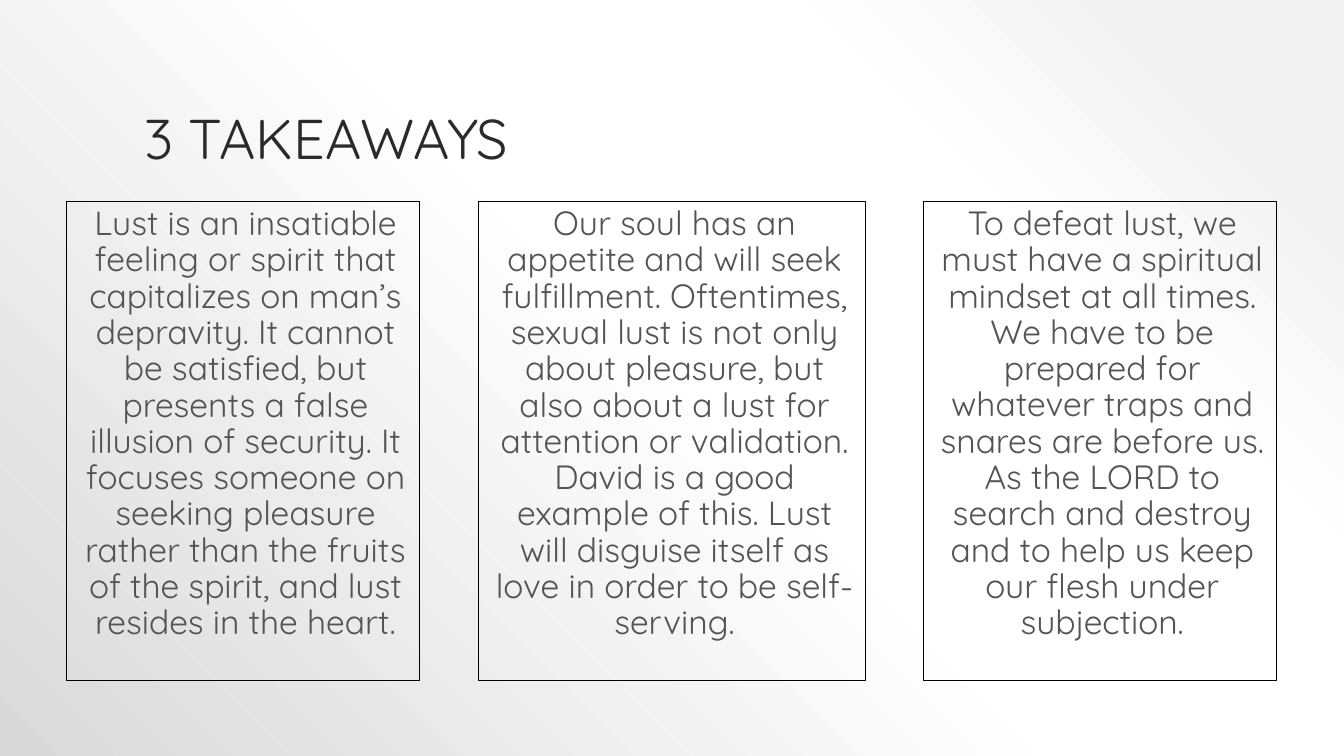
"""Builds the slide "3 Takeaways" with three framed text columns."""
from lxml.etree import SubElement
from pptx import Presentation
from pptx.dml.color import RGBColor as RGB
from pptx.enum.text import MSO_ANCHOR as ANCHOR, MSO_AUTO_SIZE as AUTO, PP_ALIGN as ALIGN
from pptx.oxml import parse_xml
from pptx.oxml.ns import nsdecls, qn
from pptx.util import Pt

FONT = "Quicksand"
TITLE_COLOR = RGB(0x2A, 0x2A, 0x2A)
BODY_COLOR = RGB(0x54, 0x54, 0x54)
LINE_COLOR = RGB(0x00, 0x00, 0x00)
BACKGROUND = [
    (10, RGB(0xF2, 0xF2, 0xF2)),
    (28, RGB(0xFF, 0xFF, 0xFF)),
    (48, RGB(0xFF, 0xFF, 0xFF)),
    (100, RGB(0xD9, 0xD9, 0xD9)),
]

COLUMN_TOP, COLUMN_HEIGHT = 144, 342
COLUMNS = [
    (47.5, 252, "Lust is an insatiable feeling or spirit that capitalizes on man’s depravity. "
     "It cannot be satisfied, but presents a false illusion of security. It focuses someone "
     "on seeking pleasure rather than the fruits of the spirit, and lust resides in the heart."),
    (342, 276, "Our soul has an appetite and will seek fulfillment. Oftentimes, sexual lust is "
     "not only about pleasure, but also about a lust for attention or validation. David is a "
     "good example of this. Lust will disguise itself as love in order to be self-serving."),
    (659.5, 252, "To defeat lust, we must have a spiritual mindset at all times. We have to be "
     "prepared for whatever traps and snares are before us. As the LORD to search and destroy "
     "and to help us keep our flesh under subjection."),
]


def set_background(s):
    stops = "".join(
        f'<a:gs pos="{pos * 1000}"><a:srgbClr val="{color}"/></a:gs>'
        for pos, color in BACKGROUND
    )
    bg = parse_xml(
        f'<p:bg {nsdecls("p", "a")}><p:bgPr><a:gradFill rotWithShape="1">'
        f'<a:gsLst>{stops}</a:gsLst><a:path path="circle">'
        '<a:fillToRect l="100000" b="100000"/></a:path></a:gradFill>'
        '<a:effectLst/></p:bgPr></p:bg>'
    )
    s.element.cSld.insert(0, bg)


def place(sp, left, top, width, height):
    sp.left, sp.top = Pt(left), Pt(top)
    sp.width, sp.height = Pt(width), Pt(height)


def write(sp, text, size, color, align, anchor):
    tf = sp.text_frame
    tf.word_wrap = True
    tf.auto_size = AUTO.NONE
    tf.vertical_anchor = anchor
    p = tf.paragraphs[0]
    p.alignment = align
    p.line_spacing = 0.9
    r = p.add_run()
    r.text = text
    r.font.name = FONT
    r.font.size = Pt(size)
    r.font.color.rgb = color
    return p


def fill_title(sp, text):
    place(sp, 96, 21.6, 768, 126 - 21.6)
    write(sp, text, 40, TITLE_COLOR, ALIGN.LEFT, ANCHOR.BOTTOM)


def fill_column(sp, left, width, text):
    place(sp, left, COLUMN_TOP, width, COLUMN_HEIGHT)
    sp.line.color.rgb = LINE_COLOR
    sp.line.width = Pt(0.75)
    p = write(sp, text, 24, BODY_COLOR, ALIGN.CENTER, ANCHOR.TOP)
    p.space_before = Pt(18)
    pPr = p._p.get_or_add_pPr()
    pPr.set("marL", str(Pt(3.6)))
    pPr.set("indent", "0")
    SubElement(pPr, qn("a:buNone"))


def main():
    prs = Presentation()
    prs.slide_width, prs.slide_height = Pt(960), Pt(540)
    s = prs.slides.add_slide(prs.slide_layouts.get_by_name("Two Content"))
    set_background(s)
    title, first, second = s.placeholders
    third = s.shapes.add_textbox(Pt(0), Pt(0), Pt(0), Pt(0))
    fill_title(title, "3 TAKEAWAYS")
    for sp, column in zip((first, second, third), COLUMNS):
        fill_column(sp, *column)
    prs.save("out.pptx")


if __name__ == "__main__":
    main()
